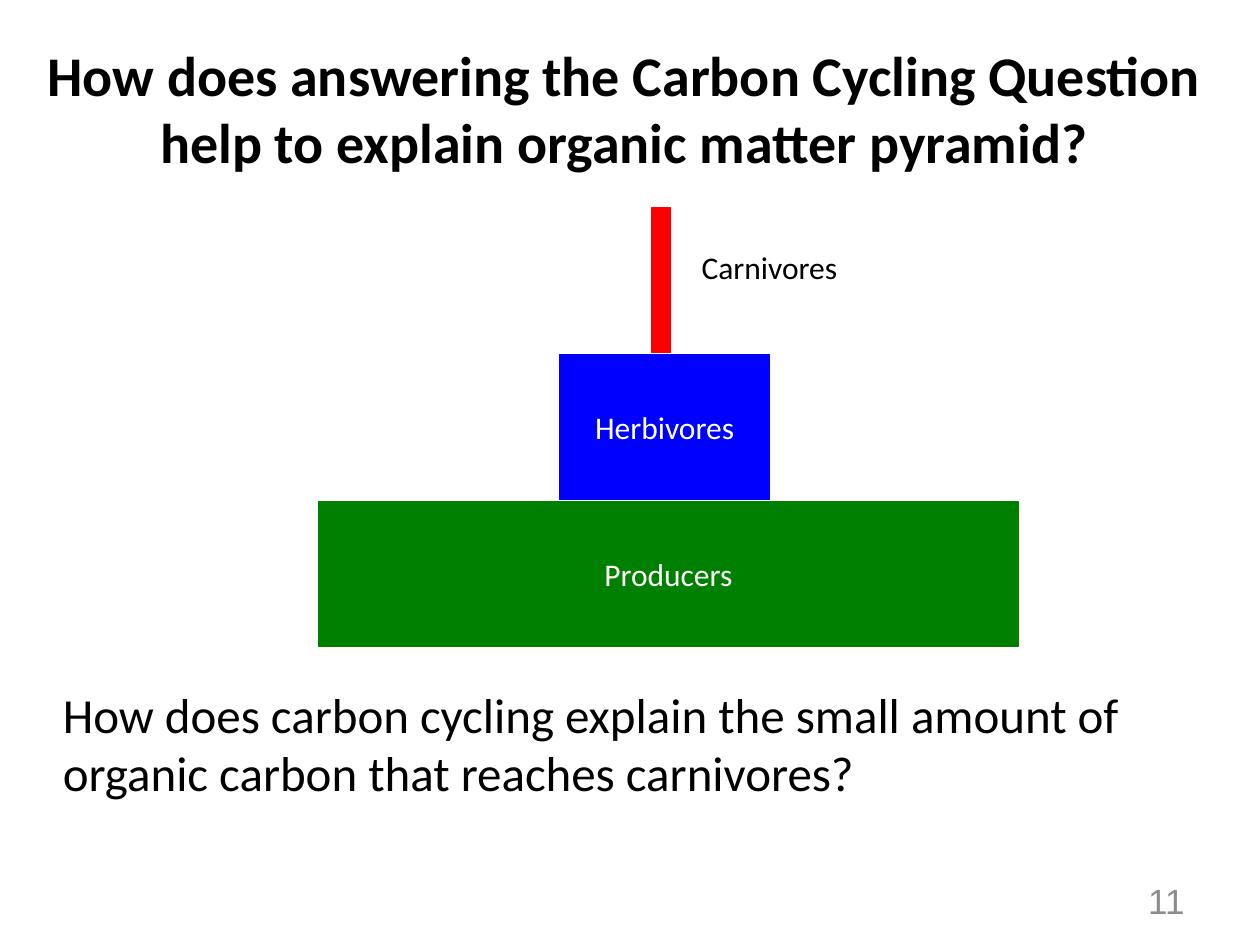
from pptx import Presentation, util as u
from pptx.dml.color import RGBColor
from pptx.enum import shapes, text

BLACK = RGBColor(0, 0, 0)
WHITE = RGBColor(255, 255, 255)
GRAY = RGBColor(0x8C, 0x8C, 0x8C)
GREEN = RGBColor(0, 0x80, 0)
BLUE = RGBColor(0, 0, 255)
RED = RGBColor(255, 0, 0)

deck = Presentation()
deck.slide_width, deck.slide_height = u.Inches(10), u.Inches(7.5)
slide = deck.slides.add_slide(deck.slide_layouts[5])


def place(box, left, top, width, height):
    box.left, box.top, box.width, box.height = map(u.Inches, (left, top, width, height))


def write(box, words, size, color, align, anchor, font="Calibri", wrap=True):
    frame = box.text_frame
    frame.text = words
    frame.word_wrap = wrap
    frame.auto_size = text.MSO_AUTO_SIZE.NONE
    frame.vertical_anchor = anchor
    line = frame.paragraphs[0]
    line.alignment = align
    line.font.name, line.font.size = font, u.Pt(size)
    line.font.color.rgb = color
    return line


LEFT, CENTER, RIGHT = text.PP_ALIGN.LEFT, text.PP_ALIGN.CENTER, text.PP_ALIGN.RIGHT
TOP, MIDDLE = text.MSO_ANCHOR.TOP, text.MSO_ANCHOR.MIDDLE

title = slide.shapes.title
place(title, 0.21, 0.23, 9.49, 1.25)
heading = write(title, "How does answering the Carbon Cycling Question help to explain "
                "organic matter pyramid?", 32, BLACK, CENTER, MIDDLE)
heading.font.bold = True

pyramid_top, level_pitch, level_height = 1.65, 1.165, 1.15
levels = [
    ("Producers", 2.53, 5.55, GREEN),
    ("Herbivores", 4.44, 1.67, BLUE),
    ("", 5.17, 0.15, RED),
]
for step, (name, left, width, color) in enumerate(levels):
    top = pyramid_top + (len(levels) - 1 - step) * level_pitch
    level = slide.shapes.add_shape(shapes.MSO_SHAPE.RECTANGLE, 0, 0, 0, 0)
    place(level, left, top, width, level_height)
    level.shadow.inherit = False
    level.fill.solid()
    level.fill.fore_color.rgb = level.line.color.rgb = color
    level.line.width = u.Pt(0.75)
    if name:
        write(level, name, 18, WHITE, CENTER, MIDDLE)

labels = [
    ((5.47, 1.92, 1.3, 0.4), ("Carnivores", 18, BLACK, LEFT, TOP, "Calibri", False)),
    ((0.4, 5.38, 9.02, 1.32), ("How does carbon cycling explain the small amount of organic carbon "
                               "that reaches carnivores?", 28, BLACK, LEFT, TOP)),
    ((7.17, 6.95, 2.33, 0.4), ("11", 20, GRAY, RIGHT, MIDDLE, "Arial")),
]
for area, content in labels:
    label = slide.shapes.add_textbox(0, 0, 0, 0)
    place(label, *area)
    write(label, *content)

deck.save("out.pptx")
